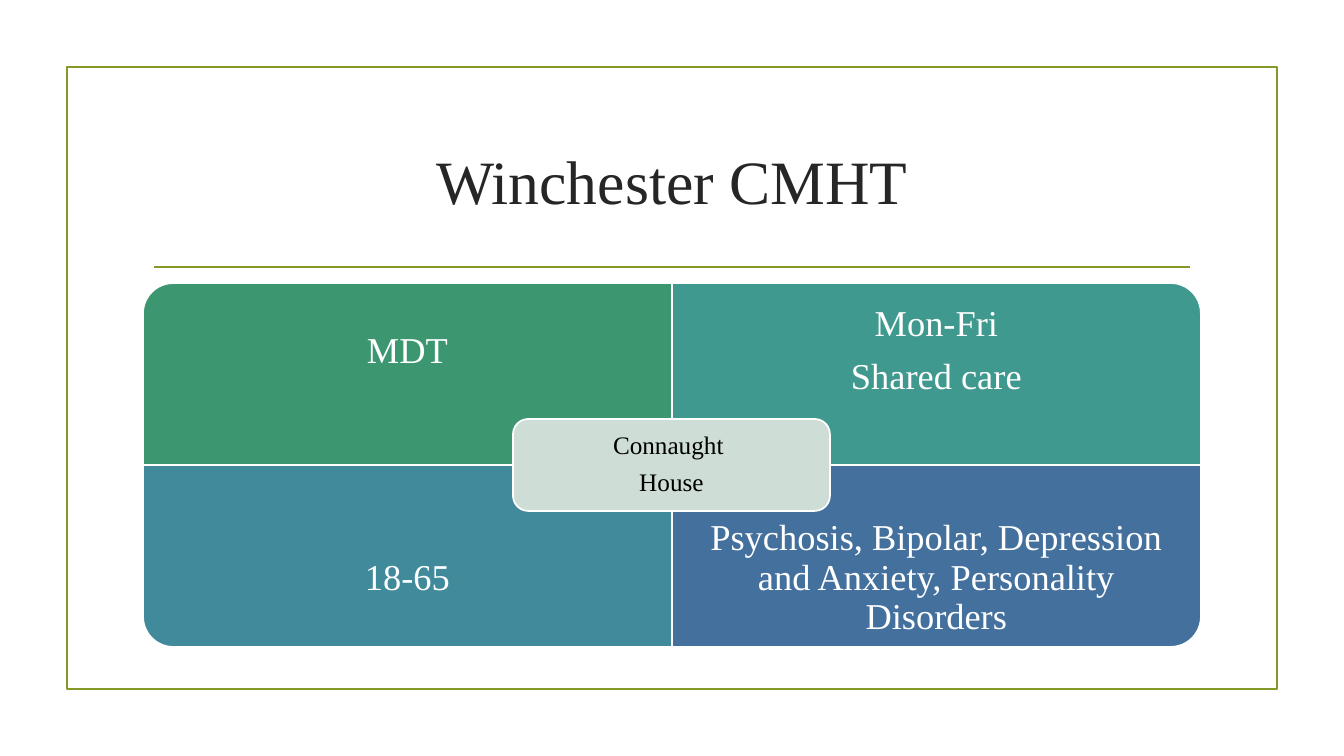
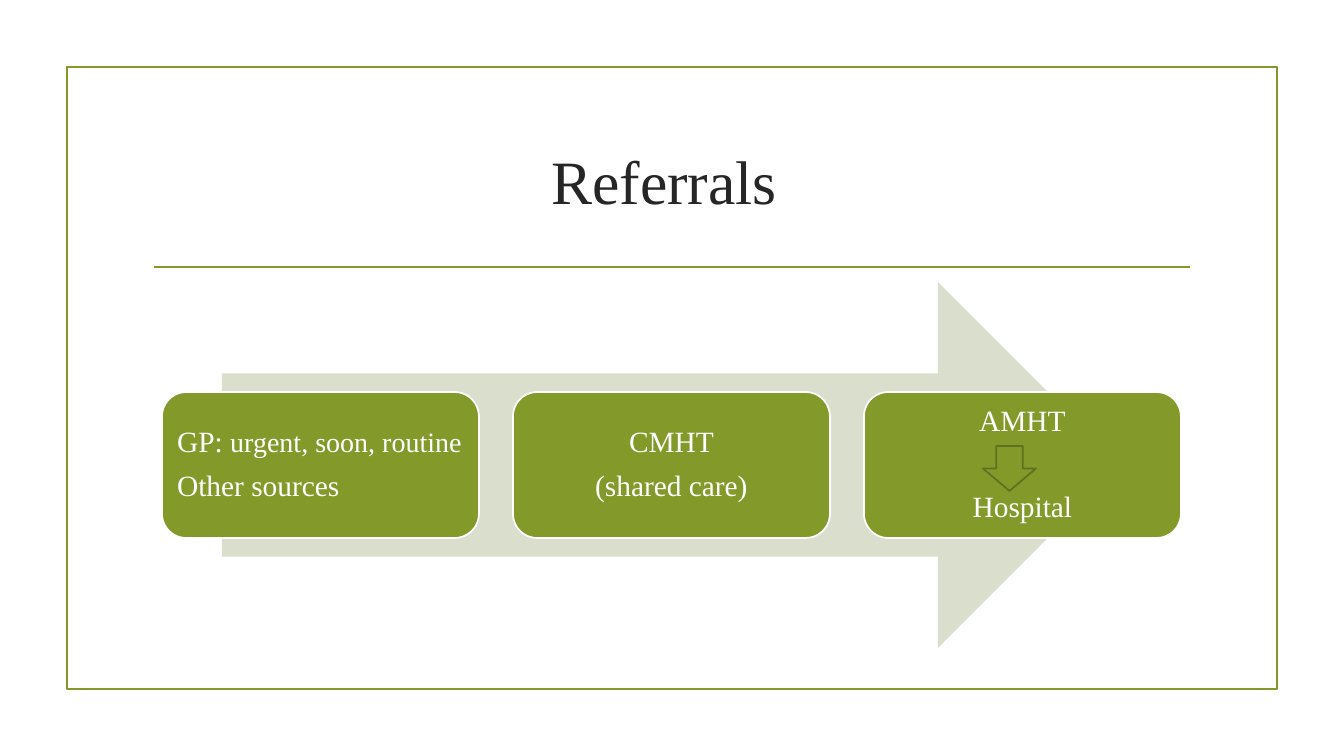
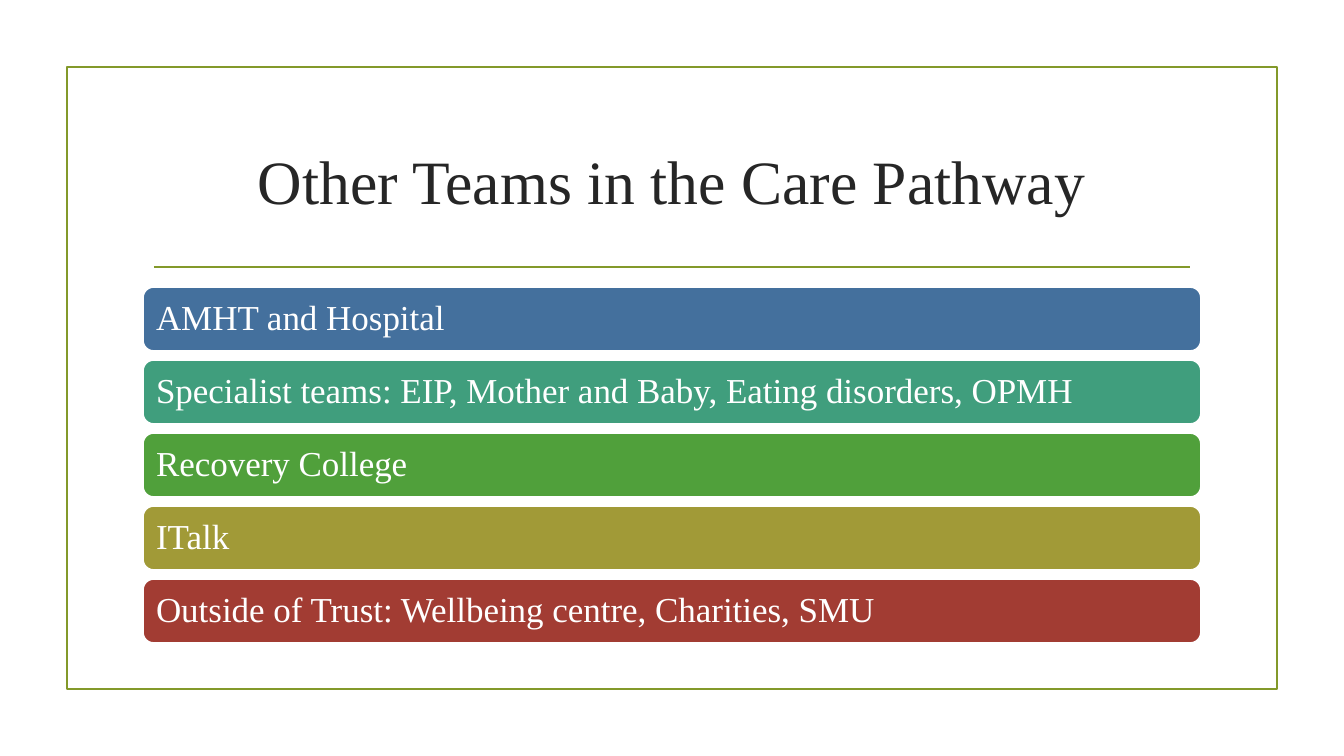
from pptx import Presentation
from pptx.dml.color import RGBColor
from pptx.enum.shapes import MSO_CONNECTOR, MSO_SHAPE
from pptx.enum.text import MSO_ANCHOR, PP_ALIGN
from pptx.oxml.ns import qn
from pptx.util import Emu, Pt
from lxml import etree

RECT = MSO_SHAPE.RECTANGLE
ROUNDED = MSO_SHAPE.ROUNDED_RECTANGLE
ONE_ROUND = MSO_SHAPE.ROUND_1_RECTANGLE
RIGHT_ARROW = MSO_SHAPE.RIGHT_ARROW
DOWN_ARROW = MSO_SHAPE.DOWN_ARROW
STRAIGHT = MSO_CONNECTOR.STRAIGHT
LEFT, CENTER = PP_ALIGN.LEFT, PP_ALIGN.CENTER
MIDDLE = MSO_ANCHOR.MIDDLE

EMU_PER_PX = 914400 / 100.8
FONT = "Times New Roman"
OLIVE, WHITE, BLACK, INK = "83992A", "FFFFFF", "000000", "262626"
LINE_WIDTH = 1.25
LINE_GAP = 0.39


def px(count):
    """Turn pixels into EMU."""
    return Emu(round(count * EMU_PER_PX))


def color(value):
    """Turn a hex string into a colour."""
    return RGBColor.from_string(value)


class Deck:
    """Hold the shared style and the current page."""

    def __init__(self):
        """Start an empty widescreen deck."""
        self.deck = Presentation()
        self.deck.slide_width, self.deck.slide_height = px(1344), px(756)
        self.page = None

    def add_page(self, title):
        """Add a page with its frame, rule and title."""
        self.page = self.deck.slides.add_slide(self.deck.slide_layouts[6])
        self.shape(RECT, 67, 67, 1210, 622, None, OLIVE)
        self.rule(154, 267, 1190)
        self.text(143, 108, 1058, 144, [[(title, 44)]], 10, INK, spacing=1)

    def rule(self, left, top, right):
        """Draw a horizontal line."""
        line = self.page.shapes.add_connector(STRAIGHT, px(left), px(top), px(right), px(top))
        line.line.color.rgb = color(OLIVE)
        line.line.width = Pt(LINE_WIDTH)
        etree.SubElement(line._element.spPr, qn("a:effectLst"))

    def shape(self, kind, left, top, width, height, fill, outline=WHITE, turn=0):
        """Draw a preset shape without shadow."""
        shape = self.page.shapes.add_shape(kind, px(left), px(top), px(width), px(height))
        shape.shadow.inherit = False
        shape.rotation = turn
        if fill:
            shape.fill.solid()
            shape.fill.fore_color.rgb = color(fill)
        else:
            shape.fill.background()
        if outline:
            shape.line.color.rgb = color(outline)
            shape.line.width = Pt(LINE_WIDTH)
        else:
            shape.line.fill.background()
        return shape

    def text(self, left, top, width, height, lines, inset, ink=WHITE, spacing=0.9):
        """Add a centred text box."""
        box = self.page.shapes.add_textbox(px(left), px(top), px(width), px(height))
        self.fill_text(box, lines, inset, ink, spacing=spacing)

    def fill_text(self, box, lines, inset, ink=WHITE, align=CENTER, spacing=0.9, gap=LINE_GAP):
        """Put lines of (text, size) spans in a box, with gaps in ems between."""
        frame = box.text_frame
        frame.word_wrap = True
        frame.vertical_anchor = MIDDLE
        frame.margin_left = frame.margin_right = px(inset)
        frame.margin_top = frame.margin_bottom = px(inset)
        for index, spans in enumerate(lines):
            para = frame.add_paragraph() if index else frame.paragraphs[0]
            para.alignment = align
            para.line_spacing = spacing
            if spacing < 1:
                last = index == len(lines) - 1
                para.space_after = Pt(round(spans[0][1] * (LINE_GAP if last else gap), 1))
            for content, size in spans:
                span = para.add_run()
                span.text = content
                span.font.name = FONT
                span.font.size = Pt(size)
                span.font.color.rgb = color(ink)


def team_page(deck):
    """Build the four quadrants around a centre label."""
    deck.add_page("Winchester CMHT")
    left, top, width, height = 143, 283, 529, 182
    text_height = 137
    quadrants = [
        ("3C9770", 270, ["MDT"]),
        ("3F998E", 0, ["Mon-Fri", "Shared care"]),
        ("418A9B", 180, ["18-65"]),
        ("44709D", 90, ["Psychosis, Bipolar, Depression and Anxiety, Personality Disorders"]),
    ]
    for index, (fill, turn, lines) in enumerate(quadrants):
        row, column = divmod(index, 2)
        x, y = left + column * width, top + row * height
        sideways = turn in (90, 270)
        shift = (width - height) / 2 if sideways else 0
        size = (height, width) if sideways else (width, height)
        deck.shape(ONE_ROUND, x + shift, y - shift, *size, fill, turn=turn)
        text_top = y + row * (height - text_height)
        deck.text(x, text_top, width, text_height, [[(line, 26)] for line in lines], 20)
    label = deck.shape(ROUNDED, 513, 419, 317, 92, "CEDDD5")
    deck.fill_text(label, [[("Connaught ", 18)], [("House", 18)]], 7, BLACK)


def referral_page(deck):
    """Build three steps on a wide arrow."""
    deck.add_page("Referrals ")
    deck.shape(RIGHT_ARROW, 222, 282, 899, 366, "D9DECD", None)
    steps = [
        ([[("GP: ", 21), ("urgent, soon, routine", 20)], [("Other sources", 21)]], LEFT, LINE_GAP),
        ([[("CMHT", 21)], [("(shared care)", 21)]], CENTER, LINE_GAP),
        ([[("AMHT", 21)], [("Hospital", 21)]], CENTER, 1.82),
    ]
    for index, (lines, align, gap) in enumerate(steps):
        step = deck.shape(ROUNDED, 162 + index * 351, 392, 317, 146, OLIVE)
        deck.fill_text(step, lines, 8, align=align, gap=gap)
    deck.shape(DOWN_ARROW, 983, 446, 53, 45, OLIVE, "61711F")


def pathway_page(deck):
    """Build the list of teams as coloured bars."""
    deck.add_page("Other Teams in the Care Pathway")
    teams = [
        ("44709D", "AMHT and Hospital"),
        ("409E7D", "Specialist teams: EIP, Mother and Baby, Eating disorders, OPMH"),
        ("50A03B", "Recovery College"),
        ("A19A37", "ITalk"),
        ("A23C33", "Outside of Trust: Wellbeing centre, Charities, SMU"),
    ]
    for index, (fill, team) in enumerate(teams):
        bar = deck.shape(ROUNDED, 143, 287 + index * 73, 1058, 64, fill)
        deck.fill_text(bar, [[(team, 25)]], 10, align=LEFT)


def main():
    """Build and save the deck."""
    deck = Deck()
    team_page(deck)
    referral_page(deck)
    pathway_page(deck)
    deck.deck.save("out.pptx")


if __name__ == "__main__":
    main()
